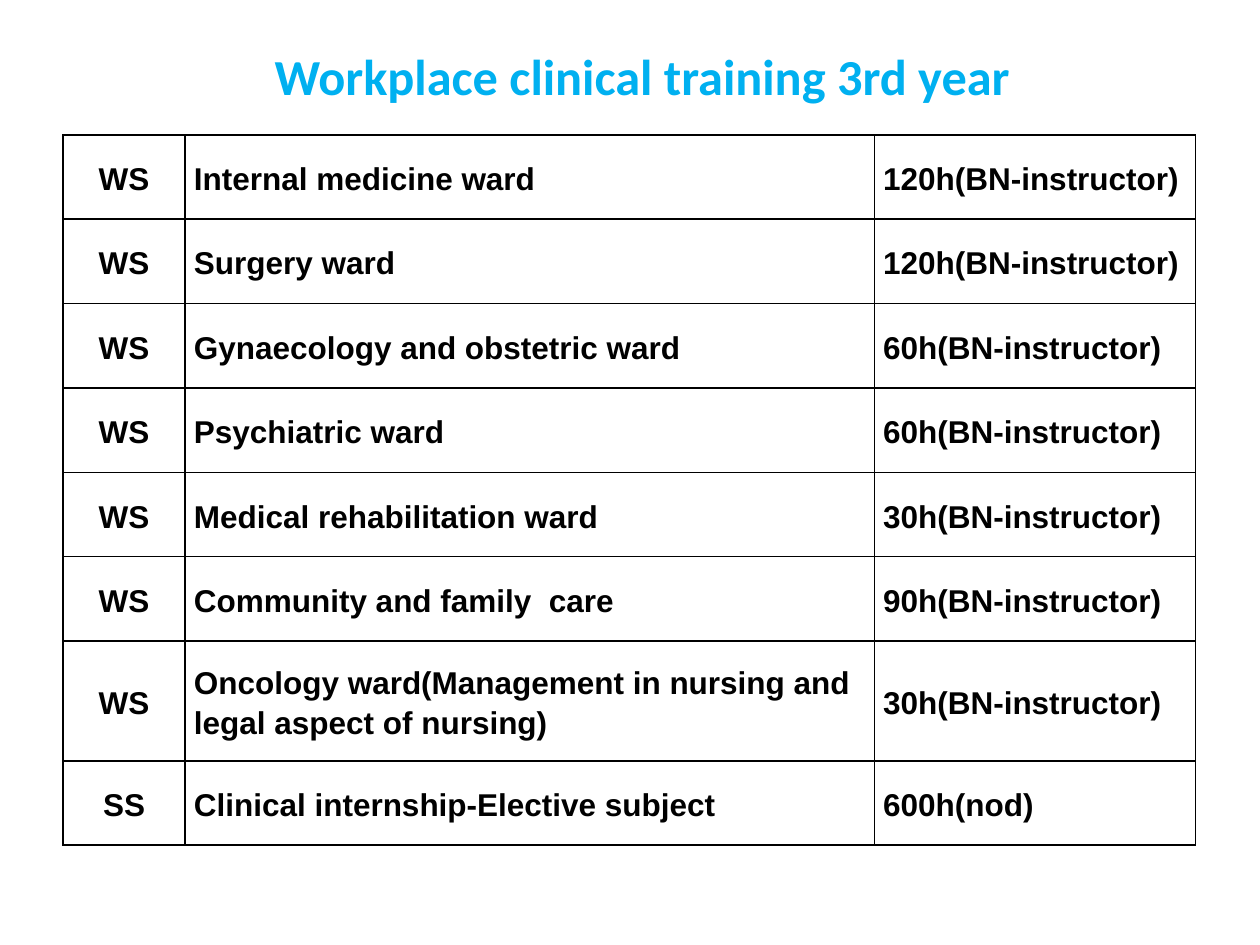
from dataclasses import dataclass

from lxml.etree import SubElement
from pptx import Presentation
from pptx.dml.color import RGBColor
from pptx.enum.text import MSO_ANCHOR as Anchor, PP_ALIGN as Align
from pptx.oxml.ns import qn
from pptx.slide import Slide
from pptx.table import _Cell as Cell
from pptx.text.text import _Paragraph as Paragraph
from pptx.util import Inches, Pt


@dataclass(frozen=True)
class Theme:
    title_font: str = "Calibri"
    body_font: str = "Arial"
    title_size: float = 28.8
    body_size: float = 18
    title_color: str = "00B0F0"
    text_color: str = "000000"
    border_color: str = "000000"
    border_width: float = 1


@dataclass(frozen=True)
class Training:
    kind: str
    place: str
    hours: str
    height: float = 0.67


THEME = Theme()
COLUMN_WIDTHS = (0.97, 5.47, 2.55)
COLUMN_ALIGNS = (Align.CENTER, Align.LEFT, Align.LEFT)
TRAININGS = (
    Training("WS", "Internal medicine ward", "120h(BN-instructor)"),
    Training("WS", "Surgery ward", "120h(BN-instructor)"),
    Training("WS", "Gynaecology and obstetric ward", "60h(BN-instructor)"),
    Training("WS", "Psychiatric ward", "60h(BN-instructor)"),
    Training("WS", "Medical rehabilitation ward", "30h(BN-instructor)"),
    Training("WS", "Community and family  care", "90h(BN-instructor)"),
    Training(
        "WS",
        "Oncology ward(Management in nursing and legal aspect of nursing)",
        "30h(BN-instructor)",
        height=0.95,
    ),
    Training("SS", "Clinical internship-Elective subject", "600h(nod)"),
)


def style_paragraph(para: Paragraph, font: str, size: float, color: str, align: Align) -> None:
    """Set the bold font and the alignment of a paragraph."""
    para.alignment = align
    para.font.name = font
    para.font.size = Pt(size)
    para.font.bold = True
    para.font.color.rgb = RGBColor.from_string(color)


def add_title(page: Slide, text: str) -> None:
    """Add the heading above the table."""
    box = page.shapes.add_textbox(Inches(0.5), Inches(0), Inches(9.2), Inches(0.84))
    frame = box.text_frame
    frame.word_wrap = True
    frame.vertical_anchor = Anchor.BOTTOM
    frame.margin_bottom = Inches(0)
    para = frame.paragraphs[0]
    para.text = text
    style_paragraph(para, THEME.title_font, THEME.title_size, THEME.title_color, Align.CENTER)


def add_borders(cell: Cell) -> None:
    """Draw a solid line on each side of a cell."""
    properties = cell._tc.get_or_add_tcPr()
    for index, side in enumerate(("a:lnL", "a:lnR", "a:lnT", "a:lnB")):
        line = SubElement(properties, qn(side), w=str(Pt(THEME.border_width)))
        fill = SubElement(line, qn("a:solidFill"))
        SubElement(fill, qn("a:srgbClr"), val=THEME.border_color)
        properties.insert(index, line)


def fill_cell(cell: Cell, text: str, align: Align) -> None:
    """Write and style one table cell."""
    cell.fill.background()
    add_borders(cell)
    cell.vertical_anchor = Anchor.MIDDLE
    cell.margin_left = cell.margin_right = Inches(0.07)
    cell.margin_top = cell.margin_bottom = Inches(0)
    para = cell.text_frame.paragraphs[0]
    para.text = text
    para.line_spacing = 1.15
    style_paragraph(para, THEME.body_font, THEME.body_size, THEME.text_color, align)


def add_training_table(page: Slide, trainings: tuple[Training, ...]) -> None:
    """Add the table with one row for each training."""
    width = sum(COLUMN_WIDTHS)
    height = sum(training.height for training in trainings)
    table = page.shapes.add_table(
        len(trainings), len(COLUMN_WIDTHS),
        Inches(0.5), Inches(1.07), Inches(width), Inches(height),
    ).table
    table.first_row = False
    table.horz_banding = False
    for column, column_width in zip(table.columns, COLUMN_WIDTHS):
        column.width = Inches(column_width)
    for row, training in zip(table.rows, trainings):
        row.height = Inches(training.height)
        texts = (training.kind, training.place, training.hours)
        for cell, text, align in zip(row.cells, texts, COLUMN_ALIGNS):
            fill_cell(cell, text, align)


def main() -> None:
    """Build the slide and save the deck."""
    deck = Presentation()
    deck.slide_width = Inches(10)
    deck.slide_height = Inches(7.5)
    page = deck.slides.add_slide(deck.slide_layouts[6])
    add_title(page, "Workplace clinical training 3rd year")
    add_training_table(page, TRAININGS)
    deck.save("out.pptx")


if __name__ == "__main__":
    main()
